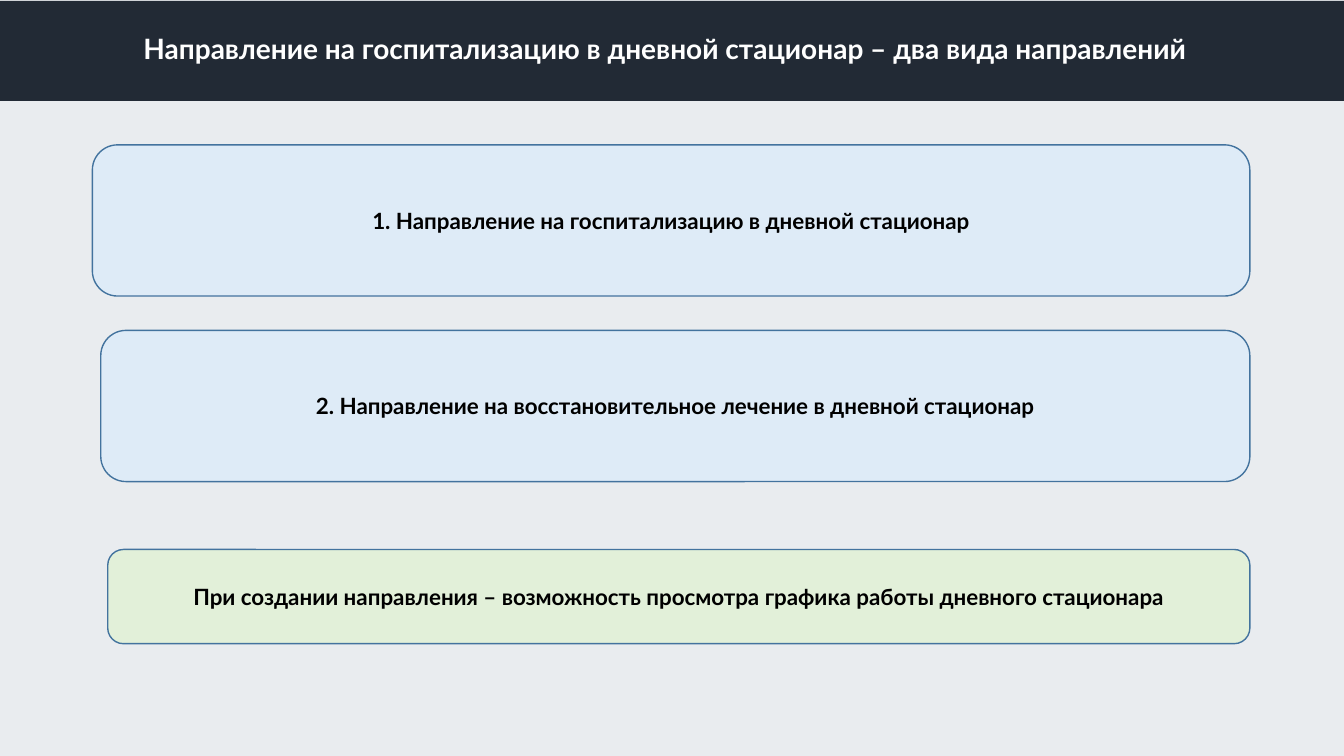
from dataclasses import dataclass

from lxml.etree import SubElement
from pptx import Presentation
from pptx.dml.color import RGBColor
from pptx.enum.shapes import MSO_SHAPE
from pptx.enum.text import MSO_ANCHOR, MSO_AUTO_SIZE, PP_ALIGN
from pptx.oxml.ns import qn
from pptx.util import Pt


@dataclass(frozen=True)
class Theme:
    font: str = "Lato"
    title_size: int = 20
    card_size: int = 16
    tint: str = "2C4A64"
    band: str = "222A35"
    referral: str = "DEEBF7"
    note: str = "E2F0D9"
    outline: str = "43739E"
    light: str = "FFFFFF"
    dark: str = "000000"


def write(frame, text, *, font, size, color, spacing=1.0):
    """Put one bold, centred paragraph in the middle of a text frame."""
    frame.word_wrap = True
    frame.auto_size = MSO_AUTO_SIZE.NONE
    frame.vertical_anchor = MSO_ANCHOR.MIDDLE
    paragraph = frame.paragraphs[0]
    paragraph.alignment = PP_ALIGN.CENTER
    paragraph.line_spacing = spacing
    run = paragraph.add_run()
    run.text = text
    run.font.name = font
    run.font.size = Pt(size)
    run.font.bold = True
    run.font.color.rgb = RGBColor.from_string(color)


class SlideBuilder:
    def __init__(self, slide, theme):
        self.slide = slide
        self.theme = theme

    def panel(self, box, fill, kind=MSO_SHAPE.RECTANGLE, outline=None, opacity=100):
        panel = self.slide.shapes.add_shape(kind, *map(Pt, box))
        panel.shadow.inherit = False
        panel.fill.solid()
        panel.fill.fore_color.rgb = RGBColor.from_string(fill)
        if opacity < 100:
            color = panel.element.spPr.find(qn("a:solidFill"))[0]
            SubElement(color, qn("a:alpha"), val=str(opacity * 1000))
        if outline:
            panel.line.color.rgb = RGBColor.from_string(outline)
            panel.line.width = Pt(1)
        else:
            panel.line.fill.background()
        return panel

    def title(self, text, box):
        """Fill the title placeholder and bring it in front of the band."""
        title = self.slide.shapes.title
        title.left, title.top, title.width, title.height = map(Pt, box)
        write(title.text_frame, text, font=self.theme.font,
              size=self.theme.title_size, color=self.theme.light, spacing=0.9)
        title.element.getparent().append(title.element)

    def card(self, text, box, fill):
        card = self.panel(box, fill, MSO_SHAPE.ROUNDED_RECTANGLE, self.theme.outline)
        write(card.text_frame, text, font=self.theme.font,
              size=self.theme.card_size, color=self.theme.dark)


def main():
    theme = Theme()
    width, height = 960, 540
    cards_right = 892.8

    presentation = Presentation()
    presentation.slide_width, presentation.slide_height = Pt(width), Pt(height)
    slide = presentation.slides.add_slide(presentation.slide_layouts[5])
    builder = SlideBuilder(slide, theme)

    builder.panel((0, -1.4, width, height + 1.4), theme.tint, opacity=10)
    builder.panel((0, 0.7, width, 71.3), theme.band)
    builder.title(
        "Направление на госпитализацию в дневной стационар – два вида направлений",
        (0, 13, 950.4, 45.4),
    )

    cards = [
        ("1. Направление на госпитализацию в дневной стационар",
         66, 103.5, 108, theme.referral),
        ("2. Направление на восстановительное лечение в дневной стационар",
         72, 236, 108, theme.referral),
        ("При создании направления – возможность просмотра графика работы дневного стационара",
         77, 392.5, 67.3, theme.note),
    ]
    for text, left, top, card_height, fill in cards:
        builder.card(text, (left, top, cards_right - left, card_height), fill)

    presentation.save("out.pptx")


if __name__ == "__main__":
    main()
